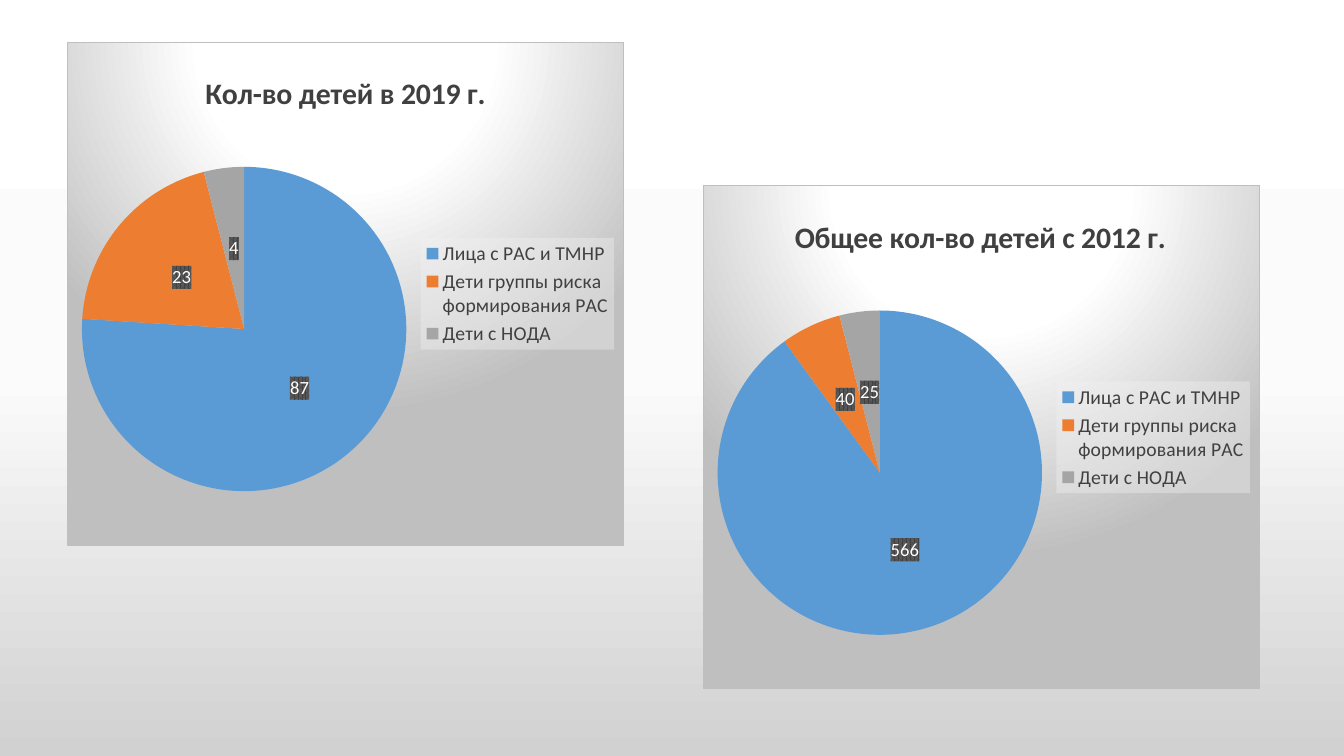
"""Build a slide with two pie charts about the number of children."""
from lxml import etree
from pptx import Presentation
from pptx import util as u
from pptx.chart.data import CategoryChartData
from pptx.dml.color import RGBColor
from pptx.enum import chart as charts
from pptx.oxml import parse_xml
from pptx.oxml.ns import nsdecls, qn

BLUE = RGBColor(0x5B, 0x9B, 0xD5)
ORANGE = RGBColor(0xED, 0x7D, 0x31)
GRAY = RGBColor(0xA5, 0xA5, 0xA5)
DARK = RGBColor(0x40, 0x40, 0x40)
WHITE = RGBColor(0xFF, 0xFF, 0xFF)
BLACK = RGBColor(0, 0, 0)
SLICE_COLORS = (BLUE, ORANGE, GRAY)
GROUPS = ("Лица с РАС и ТМНР", "Дети группы риска формирования РАС", "Дети с НОДА")

CARD_DIRECTION = ('<a:path path="circle"><a:fillToRect l="50000" t="-80000" '
                  'r="50000" b="180000"/></a:path>')
CARD_BORDER = '<a:ln w="9525"><a:solidFill><a:srgbClr val="BFBFBF"/></a:solidFill></a:ln>'
LABEL_FILL = ('<a:pattFill prst="pct75"><a:fgClr><a:srgbClr val="404040"/></a:fgClr>'
              '<a:bgClr><a:srgbClr val="595959"/></a:bgClr></a:pattFill>')
LEGEND_FILL = ('<a:solidFill><a:srgbClr val="F2F2F2"><a:alpha val="39000"/>'
               '</a:srgbClr></a:solidFill>')


def gradient(stops, direction):
    """Return gradient fill markup for (percent, colour) stops."""
    marks = "".join(f'<a:gs pos="{percent * 1000}"><a:srgbClr val="{color}"/></a:gs>'
                    for percent, color in stops)
    return f'<a:gradFill {nsdecls("a")} rotWithShape="1"><a:gsLst>{marks}</a:gsLst>{direction}</a:gradFill>'


def shape_properties(content):
    """Return a chart shape-properties element."""
    return parse_xml(f'<c:spPr {nsdecls("c", "a")}>{content}</c:spPr>')


def place(element, previous, **fractions):
    """Give a chart part a manual layout in fractions of the chart."""
    for old in element.findall(qn("c:layout")):
        element.remove(old)
    layout = etree.Element(qn("c:layout"))
    manual = etree.SubElement(layout, qn("c:manualLayout"))
    if previous is None:
        etree.SubElement(manual, qn("c:layoutTarget")).set("val", "inner")
        element.insert(0, layout)
    else:
        element.find(qn(previous)).addnext(layout)
    for axis in "xy":
        etree.SubElement(manual, qn(f"c:{axis}Mode")).set("val", "edge")
    for key, value in fractions.items():
        etree.SubElement(manual, qn(f"c:{key}")).set("val", str(value))


def style_font(font, size, color, bold=False):
    """Apply the slide's typeface to a font."""
    font.name = "Calibri"
    font.size = u.Pt(size)
    font.bold = bold
    font.color.rgb = color


def write_text(frame, text, **font_format):
    """Write one formatted run into a text frame."""
    run = frame.paragraphs[0].add_run()
    run.text = text
    style_font(run.font, **font_format)


class PieSlide:
    """Hold the current slide and the style of its pie cards."""

    def __init__(self, slide):
        """Keep the slide to draw on."""
        self.slide = slide

    def background(self, stops):
        """Fill the slide with a vertical gradient."""
        self.slide.background.fill.gradient()
        old = self.slide.element.find(".//" + qn("a:gradFill"))
        fill = parse_xml(gradient(stops, '<a:lin ang="5400000" scaled="0"/>'))
        old.getparent().replace(old, fill)

    def pie(self, title, title_x, left, top, shares, counts):
        """Add one pie card with its title, legend and labels."""
        data = CategoryChartData()
        data.categories = GROUPS
        data.add_series("Series 1", shares)
        chart = self.slide.shapes.add_chart(
            charts.XL_CHART_TYPE.PIE, u.Cm(left), u.Cm(top),
            u.Cm(14.04), u.Cm(12.7), data).chart
        style_font(chart.font, 10, BLACK)
        self.card(chart)
        self.title(chart, title, title_x)
        self.legend(chart)
        self.slices(chart, counts)
        place(chart.element.find(".//" + qn("c:plotArea")), None, x=0.025, y=0.248, w=0.585, h=0.645)

    def card(self, chart):
        """Give the chart area its gradient and border."""
        body = chart.element.find(qn("c:chart"))
        fill = gradient(((0, "FFFFFF"), (39, "FFFFFF"), (100, "BFBFBF")), CARD_DIRECTION)
        body.addnext(shape_properties(fill + CARD_BORDER))
        if chart.element.find(qn("c:roundedCorners")) is None:
            corners = etree.Element(qn("c:roundedCorners"))
            corners.set("val", "0")
            body.addprevious(corners)

    def title(self, chart, title, title_x):
        """Write and place the chart title."""
        chart.has_title = True
        write_text(chart.chart_title.text_frame, title, size=21.3, color=DARK, bold=True)
        place(chart.element.find(".//" + qn("c:title")), "c:tx", x=title_x, y=0.05)

    def legend(self, chart):
        """Show the legend on a translucent panel."""
        chart.has_legend = True
        chart.legend.position = charts.XL_LEGEND_POSITION.RIGHT
        chart.legend.include_in_layout = False
        style_font(chart.legend.font, 14, DARK)
        element = chart.element.find(".//" + qn("c:legend"))
        element.find(qn("c:overlay")).addnext(shape_properties(LEGEND_FILL))
        place(element, "c:legendPos", x=0.635, y=0.389, w=0.348, h=0.222)

    def slices(self, chart, counts):
        """Colour the slices and label them with counts."""
        plot = chart.plots[0]
        plot.vary_by_categories = True
        series = plot.series[0]
        labels = series.data_labels
        labels.show_percentage = True
        labels.show_value = False
        labels.position = charts.XL_LABEL_POSITION.CENTER
        style_font(labels.font, 13.3, WHITE, bold=True)
        for index, (color, count) in enumerate(zip(SLICE_COLORS, counts)):
            point = series.points[index]
            point.format.fill.solid()
            point.format.fill.fore_color.rgb = color
            point.format.line.fill.background()
            write_text(point.data_label.text_frame, str(count), size=13.3, color=WHITE)
            point.data_label.position = charts.XL_LABEL_POSITION.CENTER
        for label in chart.element.iter(qn("c:dLbl")):
            label.find(qn("c:tx")).addnext(shape_properties(LABEL_FILL))


def main():
    """Build and save the presentation."""
    presentation = Presentation()
    presentation.slide_width = u.Cm(33.87)
    presentation.slide_height = u.Cm(19.05)
    page = PieSlide(presentation.slides.add_slide(presentation.slide_layouts[6]))
    page.background(((0, "FFFFFF"), (50, "FBFBFB"), (100, "D1D1D1")))
    page.pie("Кол-во детей в 2019 г.", 0.238, 1.69, 1.05, (76, 20, 4), (87, 23, 4))
    page.pie("Общее кол-во детей с 2012 г.", 0.155, 17.71, 4.67, (90, 6, 4), (566, 40, 25))
    presentation.save("out.pptx")


if __name__ == "__main__":
    main()
